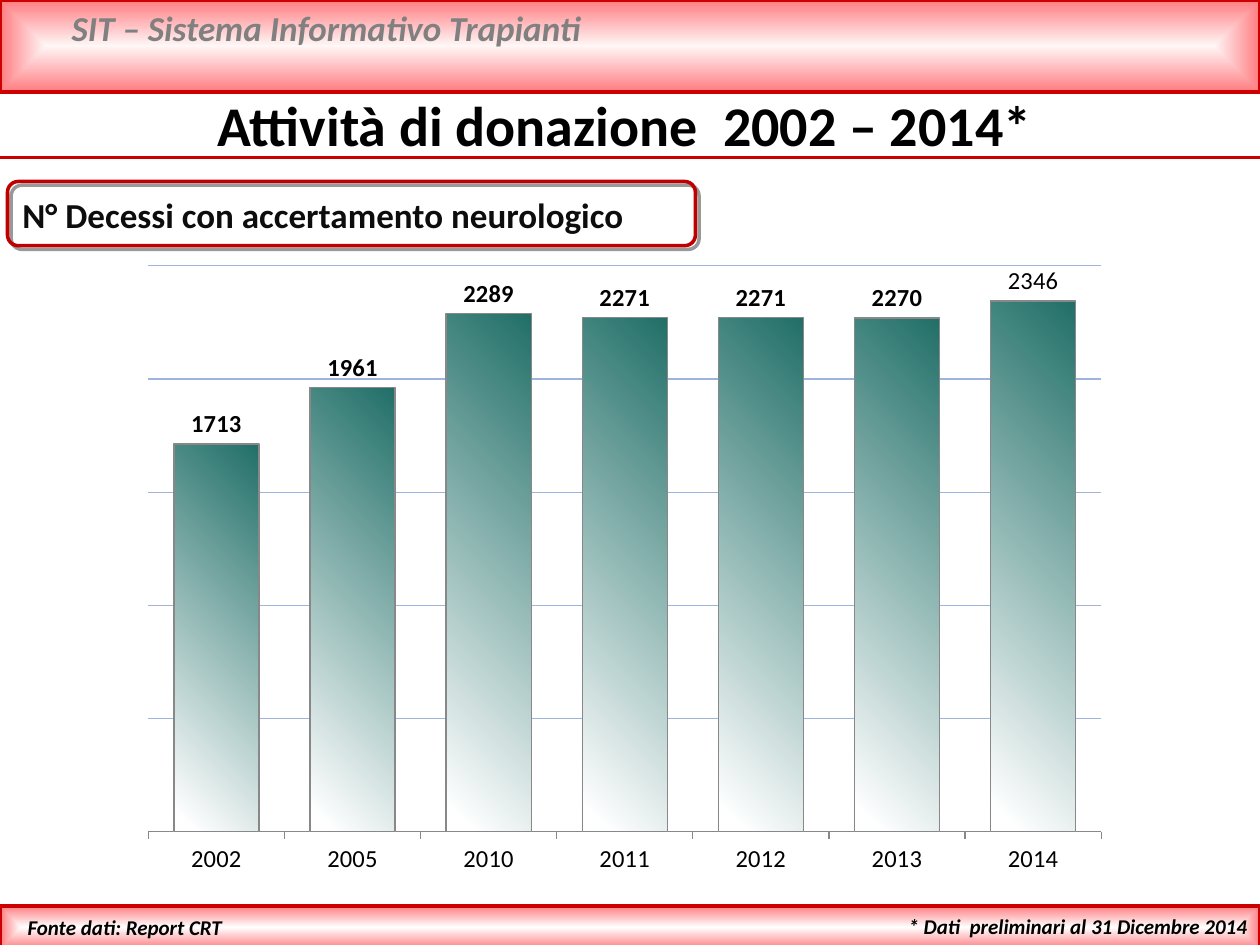
from lxml.etree import SubElement
from pptx import Presentation
from pptx.chart.data import CategoryChartData
from pptx.dml.color import RGBColor
from pptx.enum.chart import XL_CHART_TYPE, XL_LABEL_POSITION, XL_TICK_LABEL_POSITION, XL_TICK_MARK
from pptx.enum.shapes import MSO_CONNECTOR, MSO_SHAPE
from pptx.enum.text import PP_ALIGN
from pptx.oxml import parse_xml
from pptx.oxml.ns import nsdecls, qn
from pptx.util import Inches, Pt

FONT = "Calibri"
COLORS = {
    "red": "CC0000", "dark_red": "C00000", "pink": "FF7C80", "pale": "FFF6F6",
    "white": "FFFFFF", "black": "000000", "ink": "0D0D0D", "gray": "808080",
    "teal": "216F68", "outline": "888888", "grid": "9DB4DC",
}
CENTER_PATH = '<a:path path="shape"><a:fillToRect l="50000" t="50000" r="50000" b="50000"/></a:path>'
DIAGONAL = '<a:lin ang="8100000" scaled="0"/>'

# top, height, centre colour
BANDS = [(0, 0.73, "pale"), (7.19, 0.34, "white")]
# text, (left, top, width, height), size, colour, italic, alignment
TEXTS = [
    ("SIT – Sistema Informativo Trapianti", (0.47, 0, 8.98, 0.44), 20, "gray", True, PP_ALIGN.LEFT),
    ("* Dati  preliminari al 31 Dicembre 2014", (5.87, 7.2, 4.13, 0.3), 12, "black", True, PP_ALIGN.RIGHT),
    ("Fonte dati: Report CRT", (0.12, 7.21, 3.21, 0.3), 12, "black", True, PP_ALIGN.LEFT),
    ("Attività di donazione  2002 – 2014*", (0, 0.67, 9.92, 0.64), 32, "black", False, PP_ALIGN.CENTER),
    ("N° Decessi con accertamento neurologico", (0.08, 1.49, 5.47, 0.46), 20, "ink", False, PP_ALIGN.LEFT),
]
YEARS = ["2002", "2005", "2010", "2011", "2012", "2013", "2014"]
DEATHS = [1713, 1961, 2289, 2271, 2271, 2270, 2345]
LAST_LABEL = "2346"
PLOT_LAYOUT = {"x": 0.02, "y": 0.018, "w": 0.961, "h": 0.893}


def color(name):
    return RGBColor.from_string(COLORS[name])


def set_line(line, name, width):
    line.color.rgb = color(name)
    line.width = Pt(width)


def set_gradient(fill, properties, stops, direction):
    """Swap the solid fill of a shape or series for a gradient."""
    fill.solid()
    marks = "".join(
        f'<a:gs pos="{position * 1000}"><a:srgbClr val="{COLORS[name]}"/></a:gs>'
        for position, name in stops)
    gradient = parse_xml(
        f'<a:gradFill {nsdecls("a")} rotWithShape="1"><a:gsLst>{marks}</a:gsLst>{direction}</a:gradFill>')
    properties.replace(properties.find(qn("a:solidFill")), gradient)


def add_band(page, top, height, center):
    band = page.shapes.add_shape(MSO_SHAPE.RECTANGLE, 0, Inches(top), Inches(10), Inches(height))
    band.shadow.inherit = False
    set_gradient(band.fill, band._element.spPr, [(0, center), (100, "pink")], CENTER_PATH)
    set_line(band.line, "red", 2)


def add_text(page, text, place, size, name, italic, alignment):
    box = page.shapes.add_textbox(*map(Inches, place))
    box.text_frame.word_wrap = True
    para = box.text_frame.paragraphs[0]
    para.text = text
    para.alignment = alignment
    font = para.runs[0].font
    font.name, font.size, font.bold, font.italic = FONT, Pt(size), True, italic
    font.color.rgb = color(name)


def add_rule(page):
    rule = page.shapes.add_connector(MSO_CONNECTOR.STRAIGHT, 0, Inches(1.25), Inches(10), Inches(1.25))
    set_line(rule.line, "red", 2)
    SubElement(rule._element.spPr, qn("a:effectLst"))


def add_caption_frame(page):
    frame = page.shapes.add_shape(
        MSO_SHAPE.ROUNDED_RECTANGLE, Inches(0.06), Inches(1.44), Inches(5.46), Inches(0.51))
    frame.adjustments[0] = 0.167
    frame.fill.background()
    set_line(frame.line, "dark_red", 2)
    frame.shadow.inherit = False
    effects = frame._element.spPr.find(qn("a:effectLst"))
    effects.append(parse_xml(
        f'<a:outerShdw {nsdecls("a")} blurRad="0" dist="{Pt(3)}" dir="2700000" algn="tl" rotWithShape="0">'
        f'<a:srgbClr val="{COLORS["black"]}"><a:alpha val="40000"/></a:srgbClr></a:outerShdw>'))


def add_plot_layout(chart):
    plot_area = chart._chartSpace.chart.plotArea
    old_layout = plot_area.find(qn("c:layout"))
    if old_layout is not None:
        plot_area.remove(old_layout)
    sizes = "".join(f'<c:{key} val="{value}"/>' for key, value in PLOT_LAYOUT.items())
    plot_area.insert(0, parse_xml(
        f'<c:layout {nsdecls("c")}><c:manualLayout><c:layoutTarget val="inner"/>'
        f'<c:xMode val="edge"/><c:yMode val="edge"/>{sizes}</c:manualLayout></c:layout>'))


def add_deaths_chart(page):
    data = CategoryChartData()
    data.categories = YEARS
    data.add_series("Decessi", DEATHS)
    chart = page.shapes.add_chart(
        XL_CHART_TYPE.COLUMN_CLUSTERED, Inches(1.02), Inches(2.02), Inches(7.87), Inches(5.03), data).chart
    chart.has_legend = False
    chart.has_title = False
    chart.font.name, chart.font.size = FONT, Pt(14)
    chart.font.color.rgb = color("black")
    add_plot_layout(chart)

    values = chart.value_axis
    values.minimum_scale, values.maximum_scale, values.major_unit = 0, 2500, 500
    values.has_major_gridlines = True
    set_line(values.major_gridlines.format.line, "grid", 0.75)
    values.visible = False
    years = chart.category_axis
    years.major_tick_mark = XL_TICK_MARK.OUTSIDE
    years.tick_label_position = XL_TICK_LABEL_POSITION.LOW
    set_line(years.format.line, "outline", 0.75)

    plot = chart.plots[0]
    plot.gap_width, plot.overlap, plot.vary_by_categories = 60, -20, False
    series = plot.series[0]
    series.format.fill.solid()
    set_gradient(series.format.fill, series._element.find(qn("c:spPr")),
                 [(0, "teal"), (96, "white")], DIAGONAL)
    set_line(series.format.line, "outline", 0.75)

    labels = series.data_labels
    labels.show_value = True
    labels.position = XL_LABEL_POSITION.OUTSIDE_END
    labels.font.name, labels.font.size, labels.font.bold = FONT, Pt(14), True
    labels.font.color.rgb = color("black")
    last = series.points[len(DEATHS) - 1].data_label
    last.text_frame.text = LAST_LABEL
    font = last.text_frame.paragraphs[0].runs[0].font
    font.name, font.size, font.bold = FONT, Pt(14), False
    font.color.rgb = color("black")
    last.position = XL_LABEL_POSITION.OUTSIDE_END


def main():
    deck = Presentation()
    deck.slide_width, deck.slide_height = Inches(10), Inches(7.5)
    page = deck.slides.add_slide(deck.slide_layouts[6])
    for band in BANDS:
        add_band(page, *band)
    add_rule(page)
    for text in TEXTS:
        add_text(page, *text)
    add_caption_frame(page)
    add_deaths_chart(page)
    deck.save("out.pptx")


if __name__ == "__main__":
    main()
